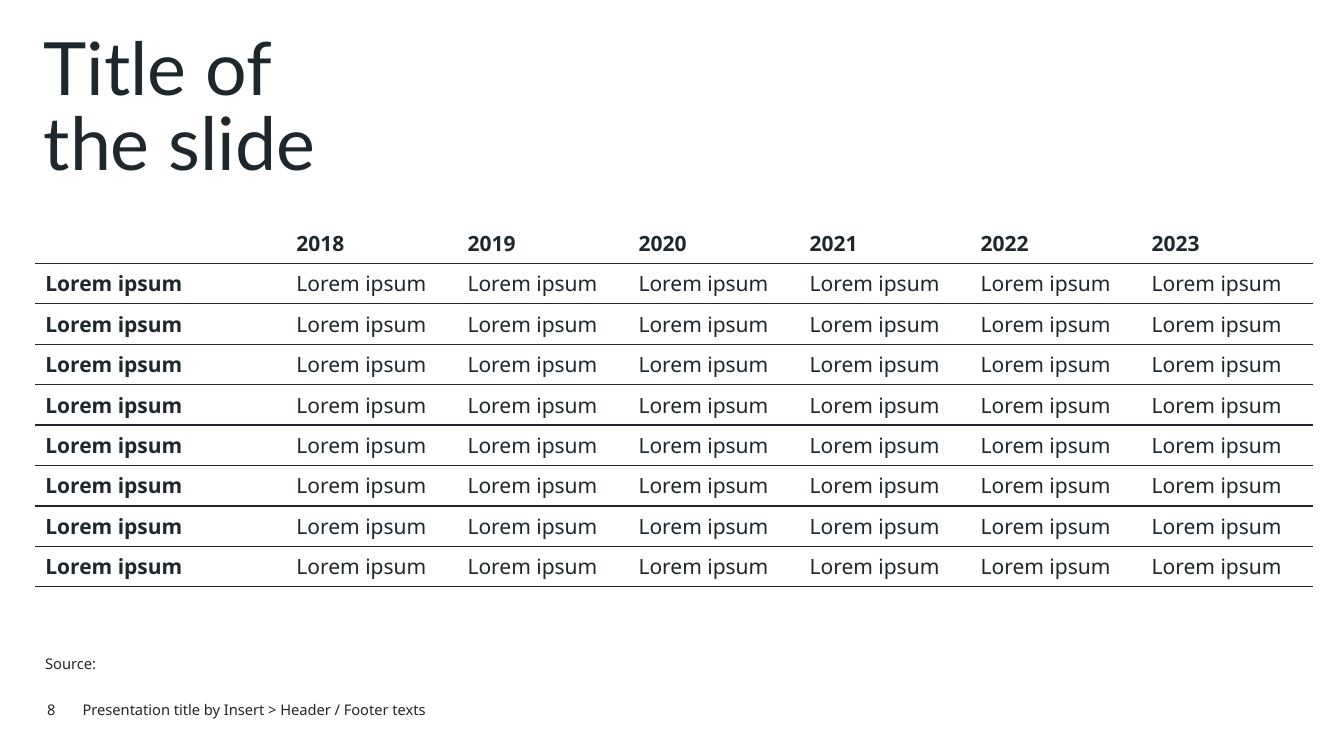
from dataclasses import dataclass

from lxml.etree import SubElement
from pptx import Presentation
from pptx.dml.color import RGBColor
from pptx.enum.text import MSO_ANCHOR, MSO_AUTO_SIZE, PP_ALIGN
from pptx.oxml.ns import qn
from pptx.slide import Slide
from pptx.table import _Cell
from pptx.text.text import TextFrame, _Paragraph
from pptx.util import Pt


@dataclass(frozen=True)
class Theme:
    ink: str = "1E272C"
    title_font: str = "Lato"
    body_font: str = "Noto Sans"
    title_size: float = 52.5
    table_size: float = 15
    small_size: float = 10.5
    rule_width: float = 1


@dataclass(frozen=True)
class Frame:
    left: float
    top: float
    width: float
    height: float

    def lengths(self) -> tuple[Pt, Pt, Pt, Pt]:
        return Pt(self.left), Pt(self.top), Pt(self.width), Pt(self.height)


@dataclass(frozen=True)
class Note:
    text: str
    frame: Frame
    anchor: MSO_ANCHOR = MSO_ANCHOR.MIDDLE
    align: PP_ALIGN = PP_ALIGN.LEFT
    line_spacing: float = 1.0


THEME = Theme()
TITLE_LINES = ("Title of", "the slide")
TITLE_FRAME = Frame(24, 21.6, 913, 110)
TABLE_FRAME = Frame(25.2, 159.2, 912.6, 260)
LABEL_WIDTH = 179.4
YEARS = [str(year) for year in range(2018, 2024)]
FILLER = "Lorem ipsum"
FILLER_ROWS = 8
NOTES = (
    Note("Source:", Frame(25.2, 461.5, 910, 20), MSO_ANCHOR.TOP, line_spacing=1.2),
    Note("Presentation title by Insert > Header / Footer texts", Frame(52, 492.5, 785.5, 29)),
    Note("8", Frame(0, 492.5, 46.8, 29), align=PP_ALIGN.RIGHT),
)


def style_paragraph(para: _Paragraph, name: str, size: float, bold: bool = False) -> None:
    font = para.font
    font.name, font.size, font.bold = name, Pt(size), bold
    font.color.rgb = RGBColor.from_string(THEME.ink)


def prepare_text(text_frame: TextFrame, anchor: MSO_ANCHOR) -> _Paragraph:
    text_frame.word_wrap = True
    text_frame.auto_size = MSO_AUTO_SIZE.NONE
    text_frame.vertical_anchor = anchor
    return text_frame.paragraphs[0]


def add_title(page: Slide) -> None:
    title = page.shapes.title
    title.left, title.top, title.width, title.height = TITLE_FRAME.lengths()
    para = prepare_text(title.text_frame, MSO_ANCHOR.TOP)
    para.alignment = PP_ALIGN.LEFT
    para.line_spacing = 0.85
    style_paragraph(para, THEME.title_font, THEME.title_size)
    for index, line in enumerate(TITLE_LINES):
        if index:
            para.add_line_break()
        para.add_run().text = line


def rule_cell(cell: _Cell, ruled_sides: str) -> None:
    """Draw the named sides of a cell and clear the others."""
    properties = cell._tc.get_or_add_tcPr()
    for position, side in enumerate("LRTB"):
        line = SubElement(properties, qn(f"a:ln{side}"))
        properties.insert(position, line)
        if side in ruled_sides:
            line.set("w", str(Pt(THEME.rule_width)))
            fill = SubElement(line, qn("a:solidFill"))
            SubElement(fill, qn("a:srgbClr")).set("val", THEME.ink)
        else:
            line.set("w", "0")
            SubElement(line, qn("a:noFill"))


def add_table(page: Slide) -> None:
    rows = [["", *YEARS]] + [[FILLER] * (len(YEARS) + 1)] * FILLER_ROWS
    table = page.shapes.add_table(len(rows), len(rows[0]), *TABLE_FRAME.lengths()).table
    table.first_row = table.horz_banding = False

    year_width = (TABLE_FRAME.width - LABEL_WIDTH) / len(YEARS)
    for index, column in enumerate(table.columns):
        column.width = Pt(year_width if index else LABEL_WIDTH)
    for row in table.rows:
        row.height = Pt(TABLE_FRAME.height / len(rows))

    for row_index, texts in enumerate(rows):
        for column_index, text in enumerate(texts):
            cell = table.cell(row_index, column_index)
            cell.vertical_anchor = MSO_ANCHOR.MIDDLE
            cell.fill.background()
            rule_cell(cell, "TB" if row_index else "B")
            cell.text = text
            is_heading = row_index == 0 or column_index == 0
            style_paragraph(cell.text_frame.paragraphs[0], THEME.body_font, THEME.table_size, is_heading)


def add_note(page: Slide, note: Note) -> None:
    box = page.shapes.add_textbox(*note.frame.lengths())
    para = prepare_text(box.text_frame, note.anchor)
    para.text = note.text
    para.alignment = note.align
    para.line_spacing = note.line_spacing
    style_paragraph(para, THEME.body_font, THEME.small_size)


def main() -> None:
    deck = Presentation()
    deck.slide_width, deck.slide_height = Pt(960), Pt(540)
    page = deck.slides.add_slide(deck.slide_layouts.get_by_name("Title Only"))

    # Title
    add_title(page)
    # Yearly table
    add_table(page)
    # Source line and footer
    for note in NOTES:
        add_note(page, note)

    deck.save("out.pptx")


if __name__ == "__main__":
    main()
